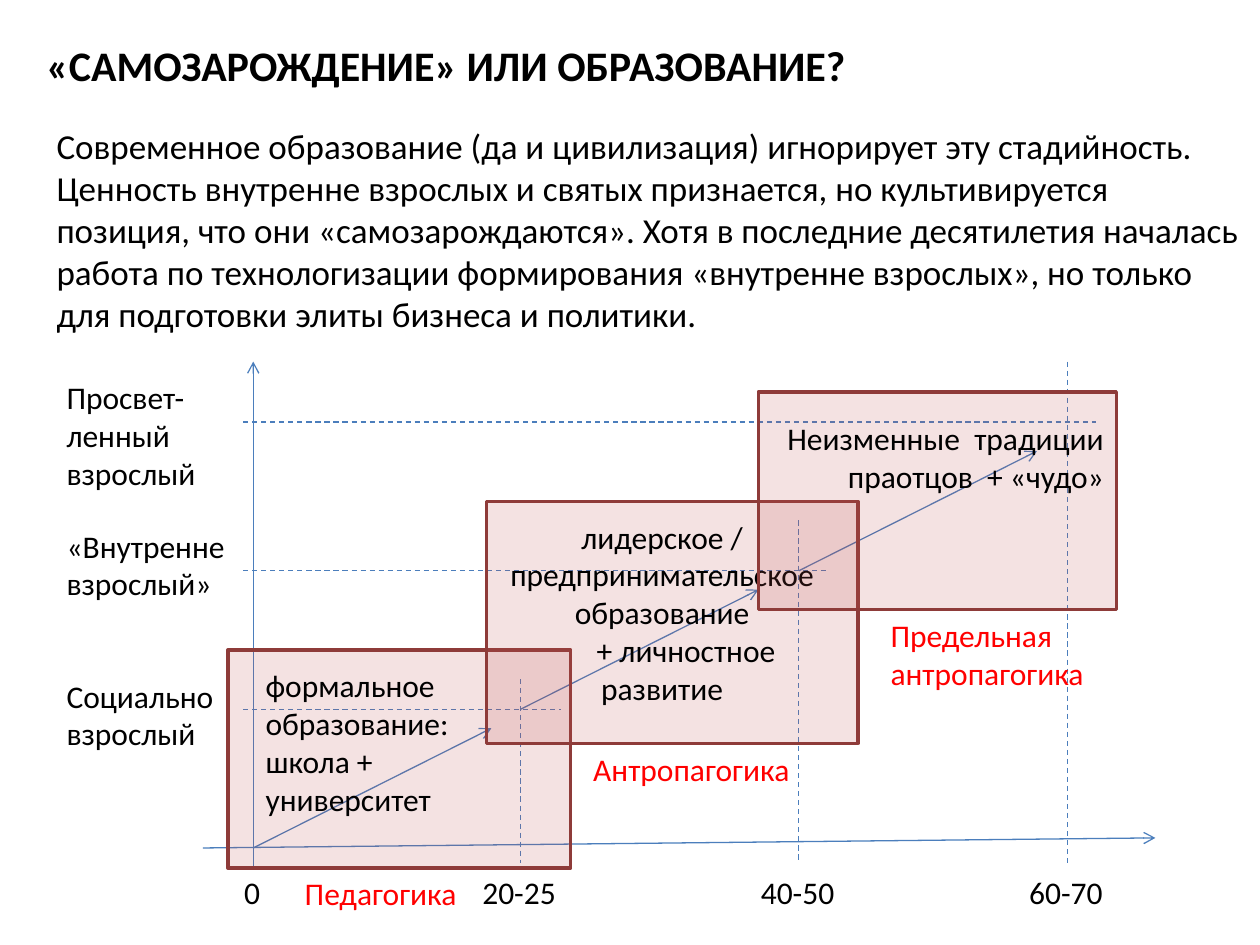
from pptx import Presentation
from pptx.dml.color import RGBColor
from pptx.enum.dml import MSO_LINE
from pptx.enum.shapes import MSO_CONNECTOR, MSO_SHAPE
from pptx.enum.text import MSO_ANCHOR, PP_ALIGN
from pptx.oxml.ns import qn
from pptx.util import Inches, Pt
from lxml.etree import SubElement

BLUE, RED, DARK, ROSE = "4B7EBC", "FF0000", "8E3B39", "C0504D"


def paint(code):
    """Turn a hex string into a colour."""
    return RGBColor.from_string(code)


def write(slide, text, box, size=18, color="000000", bold=False, wrap=True,
          align=PP_ALIGN.LEFT, anchor=MSO_ANCHOR.TOP, inset=0.1, shifts=()):
    """Add a text box; a newline starts a paragraph, a \\v breaks a line."""
    frame = slide.shapes.add_textbox(*map(Inches, box)).text_frame
    frame.word_wrap = wrap
    frame.vertical_anchor = anchor
    frame.margin_left = frame.margin_right = Inches(inset)
    frame.text = text
    for part in frame.paragraphs:
        part.alignment = align
        for run in part.runs:
            font = run.font
            font.name, font.size, font.bold = "Calibri", Pt(size), bold
            font.color.rgb = paint(color)
    for index, shift in shifts:
        props = frame.paragraphs[index]._p.get_or_add_pPr()
        props.set("marL", str(Inches(shift)))
        props.set("indent", "0")


def draw(slide, start, end, dash=False):
    """Add a dashed guide or a solid arrow."""
    link = slide.shapes.add_connector(
        MSO_CONNECTOR.STRAIGHT, *map(Inches, (*start, *end)))
    link.line.color.rgb = paint(BLUE)
    link.line.width = Pt(0.75)
    if dash:
        link.line.dash_style = MSO_LINE.DASH
    else:
        SubElement(link.line._get_or_add_ln(), qn("a:tailEnd"), type="arrow")
    SubElement(link._element.spPr, qn("a:effectLst"))


def head(slide, box):
    """Place the title and the opening paragraph."""
    left, top, width, _ = box
    write(slide, "«САМОЗАРОЖДЕНИЕ» ИЛИ ОБРАЗОВАНИЕ?",
          (left, top, width, 1.25), size=24, bold=True,
          anchor=MSO_ANCHOR.MIDDLE)
    write(slide, "Современное образование (да и цивилизация) игнорирует эту "
          "стадийность. Ценность внутренне взрослых и святых признается, но "
          "культивируется позиция, что они «самозарождаются». Хотя в последние "
          "десятилетия началась работа по технологизации формирования "
          "«внутренне взрослых», но только для подготовки элиты бизнеса и "
          "политики.", (left + 0.08, top + 1.05, width + 0.08, 1.77), size=20)


def plot(slide, box):
    """Place the axes, guides, growth arrows and axis labels."""
    left, top, width, height = box
    zero, base, foot = left + 1.58, top + 3.86, top + 3.98
    draw(slide, (zero, top + 4.02), (zero, top))
    draw(slide, (left + 1.18, base), (left + width, base - 0.08))

    ages = [(2.12, 2.52, "20-25"), (4.33, 1.26, "40-50"), (6.46, 0, "60-70")]
    levels = [(2.76, 2.52, 2.45, 1.38, "Социально\vвзрослый"),
              (1.66, 4.64, 1.26, 1.47, "«Внутренне\vвзрослый»"),
              (0.48, 6.77, 0.08, 1.24, "Просвет-\vленный\vвзрослый")]
    write(slide, "0", (zero - 0.17, top + 4.01, 0.33, 0.4), wrap=False)
    for away, rise, age in ages:
        draw(slide, (zero + away, top + rise), (zero + away, foot), dash=True)
        write(slide, age, (zero + away - 0.4, top + 4.01, 0.79, 0.4),
              wrap=False)
    for drop, reach, label, wide, name in levels:
        draw(slide, (zero - 0.08, top + drop),
             (zero - 0.08 + reach, top + drop), dash=True)
        write(slide, name, (left, top + label, wide, 0.71), wrap=False)

    starts = [(zero, base)] + [
        (zero + age[0], top + level[0]) for age, level in zip(ages, levels[:2])]
    for x, y in starts:
        draw(slide, (x, y), (x + 1.89, y - 0.95))


def stage(slide, box, text, inner, caption, under, **style):
    """Place one stage with its text and the red caption beneath."""
    left, top, width, height = box
    area = slide.shapes.add_shape(MSO_SHAPE.RECTANGLE, *map(Inches, box))
    area.shadow.inherit = False
    area.fill.solid()
    area.fill.fore_color.rgb = paint(ROSE)
    tone = area._element.spPr.find(qn("a:solidFill"))[0]
    SubElement(tone, qn("a:alpha"), val="16000")
    area.line.color.rgb = paint(DARK)
    area.line.width = Pt(2)
    x, y, wide, tall = inner
    write(slide, text, (left + x, top + y, wide, tall), **style)
    shift, wide, tall = under
    write(slide, caption, (left + shift, top + height, wide, tall), color=RED)


def stages(slide, box):
    """Place the three overlapping stages of education."""
    left, top, _, _ = box
    stage(slide, (left, top + 2.05, 2.72, 1.73),
          "формальное\vобразование:\vшкола +\vуниверситет",
          (0.2, 0.08, 1.73, 1.31), "Педагогика", (0.51, 1.42, 0.4),
          wrap=False)
    stage(slide, (left + 2.05, top + 0.87, 2.95, 1.92),
          "лидерское /\vпредпринимательское\vобразование\n"
          "+ личностное\nразвитие", (0.08, 0.08, 2.63, 1.6),
          "Антропагогика", (0.75, 2.01, 0.4),
          align=PP_ALIGN.CENTER, inset=0, shifts=[(1, 0.38)])
    stage(slide, (left + 4.21, top, 2.84, 1.73),
          "Неизменные  традиции праотцов  + «чудо»",
          (0, 0.17, 2.84, 0.71), "Предельная антропагогика",
          (0.95, 1.93, 0.7), align=PP_ALIGN.RIGHT)


def main():
    """Build and save the slide."""
    deck = Presentation()
    deck.slide_width, deck.slide_height = Inches(10), Inches(7.5)
    slide = deck.slides.add_slide(deck.slide_layouts[6])
    head(slide, (0.27, -0.11, 9.53, 2.82))
    plot(slide, (0.43, 2.87, 8.74, 4.42))
    stages(slide, (1.81, 3.11, 7.05, 3.78))
    deck.save("out.pptx")


if __name__ == "__main__":
    main()
